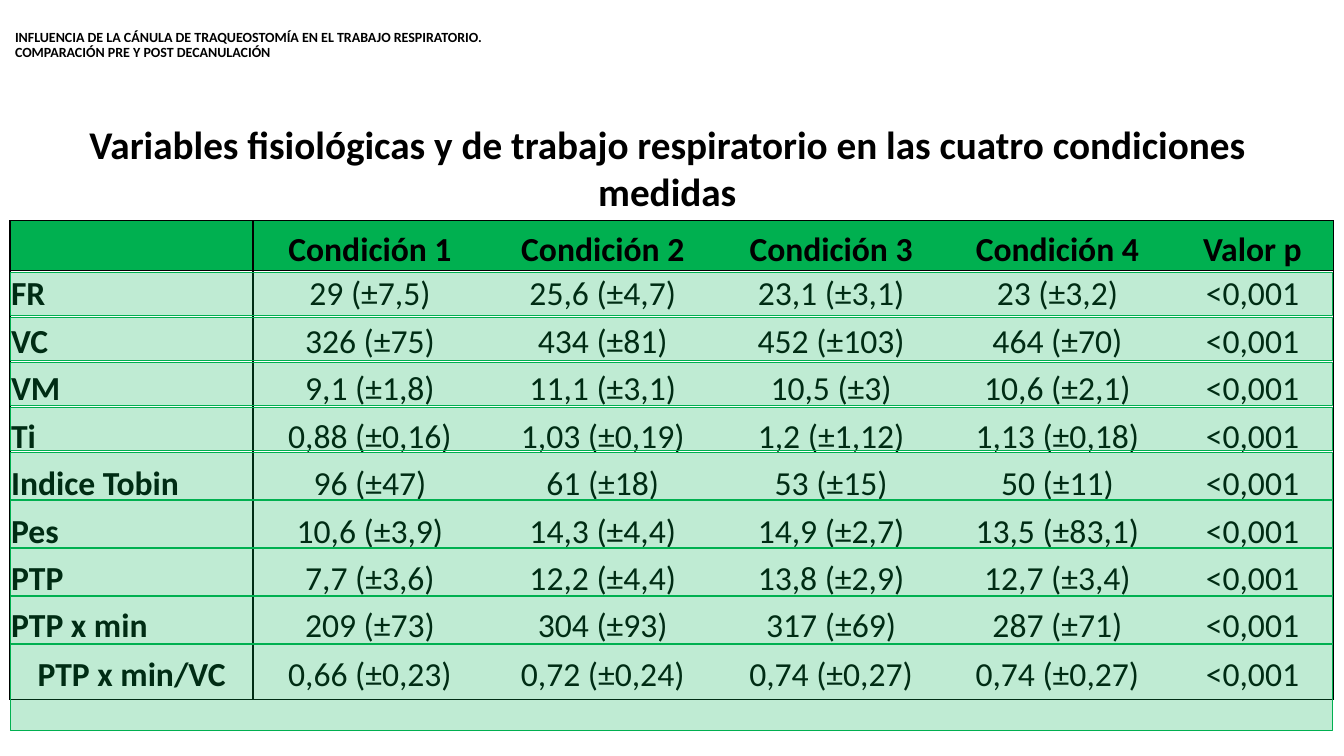
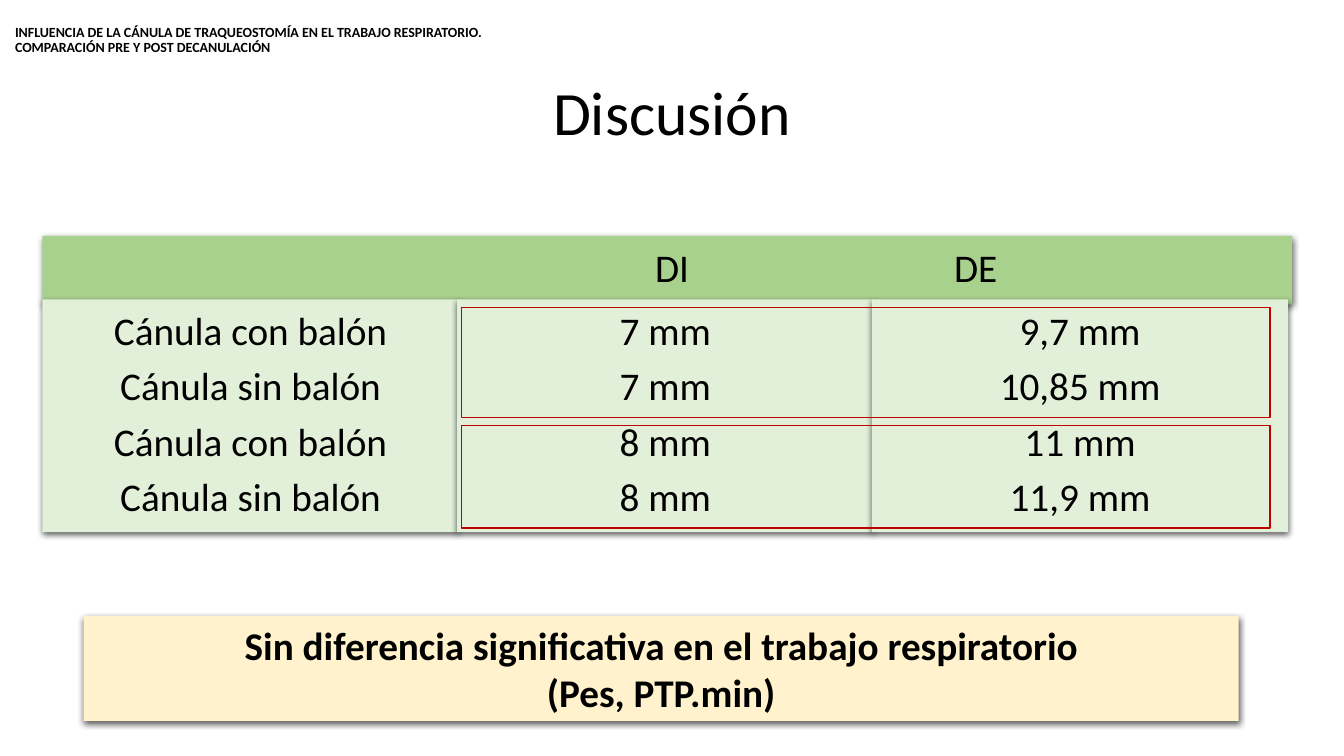
"""Two slides on tracheostomy cannulas and the work of breathing."""
from lxml.etree import SubElement
from pptx import Presentation
from pptx.dml.color import RGBColor
from pptx.enum.shapes import MSO_SHAPE
from pptx.enum.text import MSO_ANCHOR as Anchor, PP_ALIGN as Align
from pptx.oxml import parse_xml
from pptx.oxml.ns import nsdecls, qn
from pptx.util import Inches, Pt

FONT = "Calibri"
BLACK, GREEN, RED = "000000", "00B050", "C00000"
BAND_GREEN, PANEL_GREEN, CREAM = "A9D18E", "E2F0D9", "FFF2CC"
HEADER = ("INFLUENCIA DE LA CÁNULA DE TRAQUEOSTOMÍA EN EL TRABAJO RESPIRATORIO."
          "\vCOMPARACIÓN PRE Y POST DECANULACIÓN")
color = RGBColor.from_string

presentation = Presentation()
presentation.slide_width = Inches(13.33)
presentation.slide_height = Inches(7.5)
column = presentation.slide_width / 100
row = presentation.slide_height / 100


def write(frame, lines, size=28, bold=False, align=Align.CENTER, spacing=None, after=0):
    """Fill a text frame, one paragraph a line."""
    frame.word_wrap = True
    for index, line in enumerate(lines):
        paragraph = frame.add_paragraph() if index else frame.paragraphs[0]
        paragraph.text = line
        paragraph.alignment = align
        paragraph.line_spacing = spacing
        paragraph.space_after = Pt(after)
        font = paragraph.font
        font.name, font.size, font.bold = FONT, Pt(size), bold
        font.color.rgb = color(BLACK)


def add_box(slide, left, top, width, height, fill=None, line=None, weight=1,
            alpha=None, shadow=False, anchor=Anchor.TOP):
    """Add a box placed in hundredths of the slide: a text box if it has no fill or line."""
    place = (int(left * column), int(top * row), int(width * column), int(height * row))
    if fill or line:
        shape = slide.shapes.add_shape(MSO_SHAPE.RECTANGLE, *place)
        shape.shadow.inherit = False
        shape.fill.background()
        shape.line.fill.background()
    else:
        shape = slide.shapes.add_textbox(*place)
    if fill:
        shape.fill.solid()
        shape.fill.fore_color.rgb = color(fill)
    if alpha:
        fill_color = shape._element.spPr.find(qn("a:solidFill"))[0]
        SubElement(fill_color, qn("a:alpha"), val=str(alpha * 1000))
    if line:
        shape.line.color.rgb = color(line)
        shape.line.width = Pt(weight)
    if shadow:
        effects = shape._element.spPr.find(qn("a:effectLst"))
        outer = SubElement(effects, qn("a:outerShdw"), blurRad=str(Pt(4.5)),
                           dist=str(Pt(1.5)), dir="5400000", algn="ctr", rotWithShape="0")
        shadow_color = SubElement(outer, qn("a:srgbClr"), val=BLACK)
        SubElement(shadow_color, qn("a:alpha"), val="63000")
    shape.text_frame.vertical_anchor = anchor
    return shape


slides = []
for header_height in (12.93, 11.47):
    slide = presentation.slides.add_slide(presentation.slide_layouts[6])
    header = add_box(slide, 0.38, -0.4, 58, header_height, anchor=Anchor.MIDDLE)
    write(header.text_frame, [HEADER], 10, True, Align.LEFT, 0.9)
    slides.append(slide)
results, discussion = slides

measurements = [
    ["", "Condición 1", "Condición 2", "Condición 3", "Condición 4", "Valor p"],
    ["FR", "29 (±7,5)", "25,6 (±4,7)", "23,1 (±3,1)", "23 (±3,2)", "<0,001"],
    ["VC", "326 (±75)", "434 (±81)", "452 (±103)", "464 (±70)", "<0,001"],
    ["VM", "9,1 (±1,8)", "11,1 (±3,1)", "10,5 (±3)", "10,6 (±2,1)", "<0,001"],
    ["Ti", "0,88 (±0,16)", "1,03 (±0,19)", "1,2 (±1,12)", "1,13 (±0,18)", "<0,001"],
    ["Indice Tobin", "96 (±47)", "61 (±18)", "53 (±15)", "50 (±11)", "<0,001"],
    ["Pes", "10,6 (±3,9)", "14,3 (±4,4)", "14,9 (±2,7)", "13,5 (±83,1)", "<0,001"],
    ["PTP", "7,7 (±3,6)", "12,2 (±4,4)", "13,8 (±2,9)", "12,7 (±3,4)", "<0,001"],
    ["PTP x min", "209 (±73)", "304 (±93)", "317 (±69)", "287 (±71)", "<0,001"],
    ["PTP x min/VC", "0,66 (±0,23)", "0,72 (±0,24)", "0,74 (±0,27)", "0,74 (±0,27)", "<0,001"],
]
column_widths = [18.08, 17.4, 17.25, 16.73, 16.95, 12.08]
row_heights = [6.53] + [6.28] * 8 + [6.53]
last_row, last_column = len(row_heights) - 1, len(column_widths) - 1

table = results.shapes.add_table(
    len(row_heights), len(column_widths), int(0.75 * column), int(29.2 * row),
    int(sum(column_widths) * column), int(sum(row_heights) * row)).table
table.horz_banding = False
for table_column, width in zip(table.columns, column_widths):
    table_column.width = int(width * column)
for table_row, height in zip(table.rows, row_heights):
    table_row.height = int(height * row)

for r, values in enumerate(measurements):
    for c, value in enumerate(values):
        cell = table.cell(r, c)
        cell.margin_left = cell.margin_right = cell.margin_top = Inches(0.01)
        cell.margin_bottom = 0
        cell.vertical_anchor = Anchor.MIDDLE if r else Anchor.BOTTOM
        is_label = c == 0 and r < last_row
        write(cell.text_frame, [value], 24, r == 0 or c == 0,
              Align.LEFT if is_label else Align.CENTER)
        if r == 0:
            cell.fill.solid()
            cell.fill.fore_color.rgb = color(GREEN)
        else:
            cell.fill.background()
        edges = {"lnL": c <= 1, "lnR": c in (0, last_column),
                 "lnT": r <= 1, "lnB": r in (0, last_row)}
        for position, (edge, visible) in enumerate(edges.items()):
            paint = (f'<a:solidFill><a:srgbClr val="{BLACK}"/></a:solidFill>'
                     if visible else "<a:noFill/>")
            border = parse_xml(f'<a:{edge} {nsdecls("a")} w="{Pt(1)}">{paint}</a:{edge}>')
            cell._tc.get_or_add_tcPr().insert(position, border)

results_title = add_box(results, 3.15, 15.2, 93, 13.87)
write(results_title.text_frame,
      ["Variables fisiológicas y de trabajo respiratorio en las cuatro condiciones medidas"],
      bold=True)

bands = [(36 + 5.96 * i, 5.73) for i in range(4)]
bands += [(59.85 + 6.33 * i, 6.27) for i in range(4)]
bands.append((85.2, 11.47))
for top, height in bands:
    add_box(results, 0.75, top, 98.4, height, GREEN, GREEN, 0.5, alpha=25)

conclusion = add_box(discussion, 6.22, 81.5, 85.95, 13.87, CREAM, shadow=True)
write(conclusion.text_frame,
      ["Sin diferencia significativa en el trabajo respiratorio", "(Pes, PTP.min)"], bold=True)

add_box(discussion, 3.15, 31.2, 93, 9.07, BAND_GREEN, shadow=True)
for label, center in (("DI", 50), ("DE", 72.6)):
    heading = add_box(discussion, center - 8, 31.2, 16, 9.07, anchor=Anchor.MIDDLE)
    write(heading.text_frame, [label], spacing=0.9)

panels = [
    ["Cánula con balón", "Cánula sin balón"] * 2,
    ["7 mm", "7 mm", "8 mm", "8 mm"],
    ["9,7 mm", "10,85 mm", "11 mm", "11,9 mm"],
]
for index, lines in enumerate(panels):
    panel = add_box(discussion, 3.15 + 30.86 * index, 39.6, 30.98, 30.8, PANEL_GREEN,
                    shadow=True, anchor=Anchor.MIDDLE)
    write(panel.text_frame, lines, spacing=0.9, after=9.3)

for top, height in ((40.67, 14.53), (56.27, 13.6)):
    add_box(discussion, 34.35, top, 60.15, height, line=RED)

discussion_title = add_box(discussion, 5, 6.27, 90, 16.67, anchor=Anchor.MIDDLE)
write(discussion_title.text_frame, ["Discusión"], 44)

presentation.save("out.pptx")
